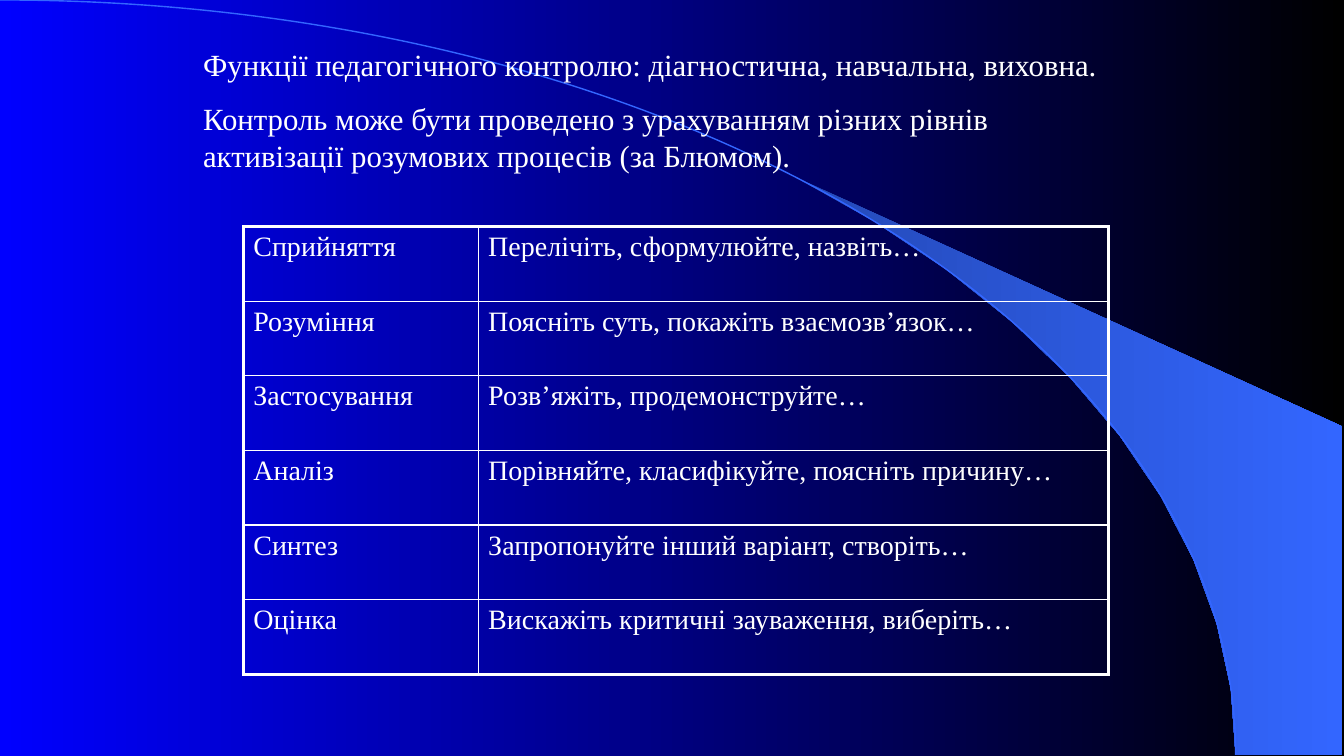
"""Build a slide on the functions of pedagogical control and Bloom's levels."""
from dataclasses import dataclass
from math import cos, radians, sin

from lxml.etree import SubElement
from pptx import Presentation
from pptx.dml.color import RGBColor
from pptx.dml.fill import FillFormat
from pptx.oxml import parse_xml
from pptx.oxml.ns import nsdecls, qn
from pptx.shapes.autoshape import Shape
from pptx.slide import Slide
from pptx.table import _Cell
from pptx.text.text import _Paragraph
from pptx.util import Cm, Pt

WHITE = RGBColor(0xFF, 0xFF, 0xFF)
BLACK = RGBColor(0x00, 0x00, 0x00)
BLUE = RGBColor(0x00, 0x00, 0xFF)
SKY = RGBColor(0x33, 0x66, 0xFF)
DEEP_SKY = RGBColor(0x24, 0x49, 0xB6)
FONT = "Times New Roman"
ARC_WIDTH, ARC_HEIGHT = 31.14, 19.02
THIN, THICK = Pt(1), Pt(2.25)

Point = tuple[float, float]


@dataclass(frozen=True)
class Level:
    name: str
    tasks: str


INTRO = [
    "Функції педагогічного контролю: діагностична, навчальна, виховна.",
    "Контроль може бути проведено з урахуванням різних рівнів активізації "
    "розумових процесів (за Блюмом).",
]
LEVELS = [
    Level("Сприйняття", "Перелічіть, сформулюйте, назвіть…"),
    Level("Розуміння", "Поясніть суть, покажіть взаємозв’язок…"),
    Level("Застосування", "Розв’яжіть, продемонструйте…"),
    Level("Аналіз", "Порівняйте, класифікуйте, поясніть причину…"),
    Level("Синтез", "Запропонуйте інший варіант, створіть…"),
    Level("Оцінка", "Вискажіть критичні зауваження, виберіть…"),
]


def set_gradient(fill: FillFormat, left: RGBColor, right: RGBColor) -> None:
    fill.gradient()
    fill.gradient_angle = 0
    for stop, color in zip(fill.gradient_stops, (left, right)):
        stop.color.rgb = color


def add_outline(s: Slide, points: list[Point], close: bool) -> Shape:
    first, *rest = [(Cm(x), Cm(y)) for x, y in points]
    builder = s.shapes.build_freeform(*first)
    builder.add_line_segments(rest, close=close)
    sp = builder.convert_to_shape()
    sp.shadow.inherit = False
    return sp


def bend(sp: Shape, points: list[Point]) -> None:
    straight = next(sp._element.iter(qn("a:lnTo")))
    outline = straight.getparent()
    outline.remove(straight)
    curve = SubElement(outline, qn("a:cubicBezTo"))
    for x, y in points:
        SubElement(curve, qn("a:pt"), x=str(int(Cm(x))), y=str(int(Cm(y))))


def set_text(p: _Paragraph, text: str, size: int) -> None:
    p.text = text
    p.font.name = FONT
    p.font.size = Pt(size)
    p.font.color.rgb = WHITE


def set_borders(cell: _Cell, widths: dict[str, Pt]) -> None:
    tc_pr = cell._tc.get_or_add_tcPr()
    for i, (side, width) in enumerate(widths.items()):
        line = parse_xml(f'<a:ln{side} {nsdecls("a")} w="{int(width)}"/>')
        solid = SubElement(line, qn("a:solidFill"))
        SubElement(solid, qn("a:srgbClr"), val=str(WHITE))
        tc_pr.insert(i, line)


def add_backdrop(s: Slide) -> None:
    set_gradient(s.background.fill, BLUE, BLACK)
    rim = [(ARC_WIDTH * sin(radians(a)), ARC_HEIGHT * (1 - cos(radians(a))))
           for a in range(40, 91, 5)]
    wedge = add_outline(s, rim + [(33.81, 19.02), (33.81, 10.74)], True)
    set_gradient(wedge.fill, DEEP_SKY, SKY)
    wedge.line.fill.background()
    end = (ARC_WIDTH, ARC_HEIGHT)
    arc = add_outline(s, [(0, 0), end], False)
    bend(arc, [(17.2, 0), (ARC_WIDTH, 8.51), end])
    arc.fill.background()
    arc.line.color.rgb = SKY
    arc.line.width = Pt(1)


def add_intro(s: Slide) -> None:
    tf = s.shapes.add_textbox(Cm(4.87), Cm(1.04), Cm(23.93), Cm(3.56)).text_frame
    tf.word_wrap = True
    for i, text in enumerate(INTRO):
        p = tf.add_paragraph() if i else tf.paragraphs[0]
        set_text(p, text, 22)
        p.space_before = Pt(12)


def add_levels(s: Slide) -> None:
    row_height = Cm(1.88)
    table = s.shapes.add_table(len(LEVELS), 2, Cm(6.13), Cm(5.71), Cm(21.8),
                               row_height * len(LEVELS)).table
    table.first_row = table.horz_banding = False
    table.columns[0].width, table.columns[1].width = Cm(5.92), Cm(15.88)
    last = len(LEVELS) - 1
    for r, level in enumerate(LEVELS):
        table.rows[r].height = row_height
        for c, text in enumerate((level.name, level.tasks)):
            cell = table.cell(r, c)
            cell.fill.background()
            set_text(cell.text_frame.paragraphs[0], text, 20)
            set_borders(cell, {
                "L": THICK if c == 0 else THIN,
                "R": THICK if c == 1 else THIN,
                "T": THICK if r == 0 else THIN,
                "B": THICK if r == last else THIN,
            })


def main() -> None:
    prs = Presentation()
    prs.slide_width, prs.slide_height = Cm(33.87), Cm(19.05)
    s = prs.slides.add_slide(prs.slide_layouts[6])
    add_backdrop(s)
    add_intro(s)
    add_levels(s)
    prs.save("out.pptx")


if __name__ == "__main__":
    main()
